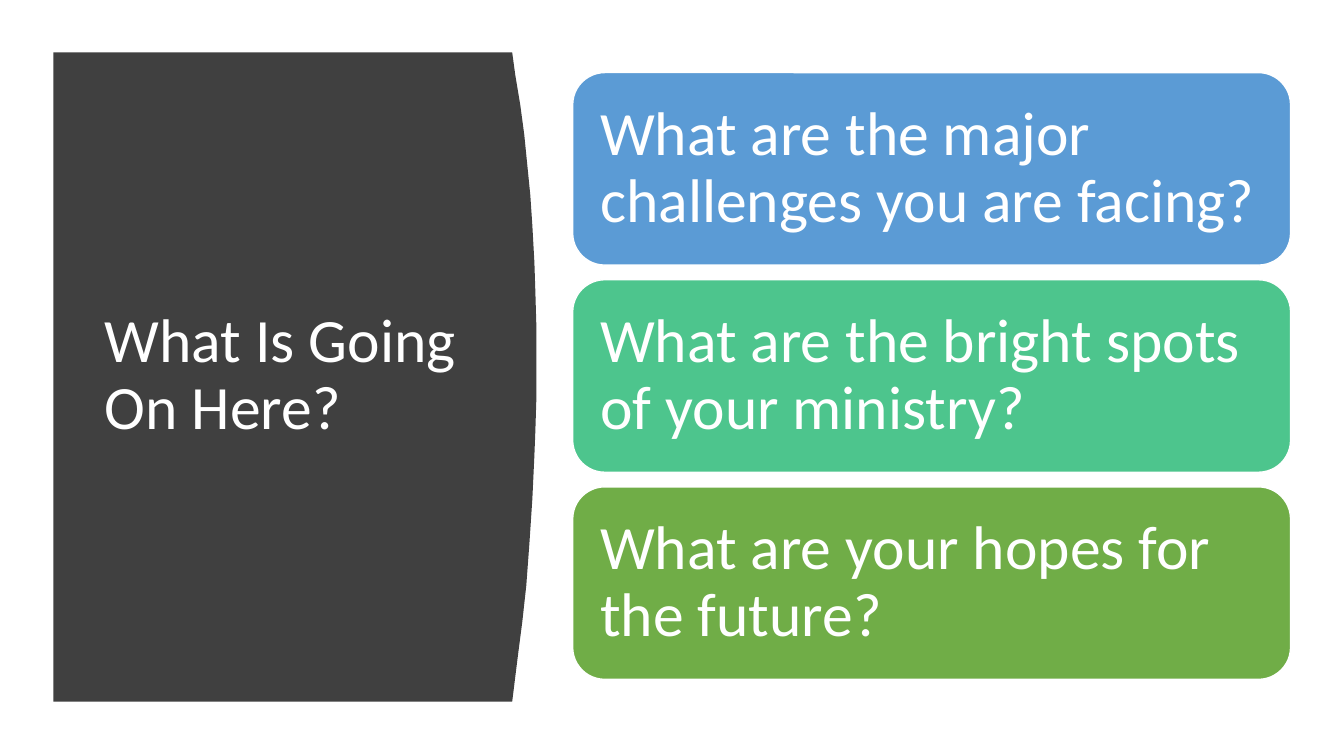
from pptx import Presentation
from pptx.dml.color import RGBColor
from pptx.enum import shapes, text
from pptx.util import Inches, Pt

# Content
TITLE = "What Is Going On Here?"
QUESTIONS = [
    ("What are the major challenges you are facing?", "blue"),
    ("What are the bright spots of your ministry?", "teal"),
    ("What are your hopes for the future?", "green"),
]
COLORS = {"panel": "404040", "white": "FFFFFF", "blue": "5B9BD5",
          "teal": "4DC58D", "green": "70AD47"}

# Layout, in inches
PANEL_LEFT = 0.53
PANEL_CURVE = [
    (5.08, 0.52), (5.11, 0.74), (5.16, 1.04), (5.2, 1.34), (5.23, 1.64),
    (5.26, 1.94), (5.28, 2.24), (5.3, 2.6), (5.31, 2.9), (5.32, 3.25),
    (5.32, 3.94), (5.31, 4.27), (5.3, 4.52), (5.28, 4.95), (5.25, 5.4),
    (5.22, 5.81), (5.18, 6.17), (5.14, 6.48), (5.11, 6.72), (5.08, 6.96),
]
CARD_LEFT, CARD_TOP, CARD_W, CARD_H = 5.68, 0.72, 7.12, 1.91
CARD_PITCH = 2.055


def rgb(name):
    return RGBColor.from_string(COLORS[name])


def write(sp, content, size=44, color="white", font="Calibri", margin=0.1):
    tf = sp.text_frame
    tf.word_wrap = True
    tf.auto_size = text.MSO_AUTO_SIZE.NONE
    tf.vertical_anchor = text.MSO_ANCHOR.MIDDLE
    tf.margin_left = tf.margin_right = Inches(margin)
    tf.margin_top = tf.margin_bottom = Inches(margin)
    p = tf.paragraphs[0]
    p.alignment = text.PP_ALIGN.LEFT
    p.line_spacing = 0.9
    r = p.add_run()
    r.text = content
    r.font.size, r.font.name = Pt(size), font
    r.font.color.rgb = rgb(color)


prs = Presentation()
prs.slide_width, prs.slide_height = Inches(13.33), Inches(7.5)
s = prs.slides.add_slide(prs.slide_layouts[5])

# Dark panel with a curved right edge, behind the title
top, bottom = PANEL_CURVE[0][1], PANEL_CURVE[-1][1]
fb = s.shapes.build_freeform(Inches(PANEL_LEFT), Inches(top))
fb.add_line_segments([(Inches(x), Inches(y)) for x, y in
                      PANEL_CURVE + [(PANEL_LEFT, bottom)]], close=True)
panel = fb.convert_to_shape()
panel.shadow.inherit = False
panel.fill.solid()
panel.fill.fore_color.rgb = rgb("panel")
panel.line.fill.background()
title = s.shapes.title
title._element.addprevious(panel._element)

# Title
title.left, title.top = Inches(0.94), Inches(1.11)
title.width, title.height = Inches(3.74), Inches(5.24)
write(title, TITLE)

# Question cards
for i, (question, color) in enumerate(QUESTIONS):
    card = s.shapes.add_shape(
        shapes.MSO_SHAPE.ROUNDED_RECTANGLE, Inches(CARD_LEFT),
        Inches(CARD_TOP + i * CARD_PITCH), Inches(CARD_W), Inches(CARD_H))
    card.shadow.inherit = False
    card.fill.solid()
    card.fill.fore_color.rgb = rgb(color)
    card.line.color.rgb = rgb("white")
    card.line.width = Pt(1)
    write(card, question, margin=0.18)

prs.save("out.pptx")
